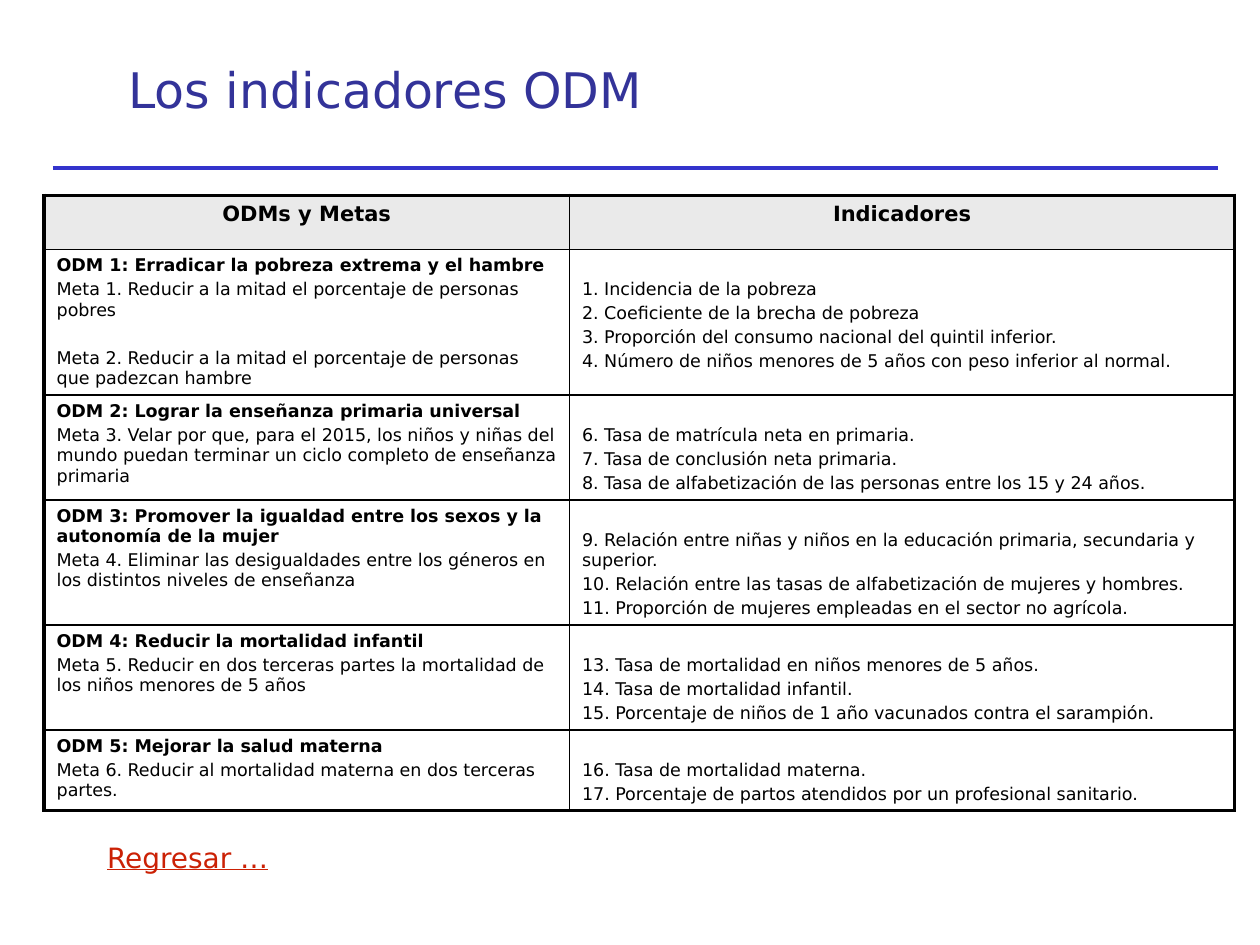
from lxml import etree
from pptx import Presentation
from pptx.dml.color import RGBColor
from pptx.enum.shapes import MSO_CONNECTOR
from pptx.enum.text import MSO_ANCHOR, MSO_AUTO_SIZE, PP_ALIGN
from pptx.oxml.ns import qn
from pptx.util import Inches, Pt

FONT = "DejaVu Sans"
BLACK = RGBColor(0x00, 0x00, 0x00)
WHITE = RGBColor(0xFF, 0xFF, 0xFF)
GRAY = RGBColor(0xEA, 0xEA, 0xEA)
NAVY = RGBColor(0x33, 0x33, 0x99)
BLUE = RGBColor(0x33, 0x33, 0xCC)
RED = RGBColor(0xCB, 0x21, 0x05)
LEFT, CENTER = PP_ALIGN.LEFT, PP_ALIGN.CENTER
TOP, MIDDLE = MSO_ANCHOR.TOP, MSO_ANCHOR.MIDDLE
NO_FIT = MSO_AUTO_SIZE.NONE
STRAIGHT = MSO_CONNECTOR.STRAIGHT

HEADERS = ["ODMs y Metas", "Indicadores"]
GOALS = [
    ("ODM 1: Erradicar la pobreza extrema y el hambre",
     ["Meta 1. Reducir a la mitad el porcentaje de personas pobres",
      "Meta 2. Reducir a la mitad el porcentaje de personas que padezcan hambre"],
     ["1. Incidencia de la pobreza",
      "2. Coeficiente de la brecha de pobreza",
      "3. Proporción del consumo nacional del quintil inferior.",
      "4. Número de niños menores de 5 años con peso inferior al normal."]),
    ("ODM 2: Lograr la enseñanza primaria universal",
     ["Meta 3. Velar por que, para el 2015, los niños y niñas del mundo puedan "
      "terminar un ciclo completo de enseñanza primaria"],
     ["6. Tasa de matrícula neta en primaria.",
      "7. Tasa de conclusión neta primaria.",
      "8. Tasa de alfabetización de las personas entre los 15 y 24 años."]),
    ("ODM 3: Promover la igualdad entre los sexos y la autonomía de la mujer",
     ["Meta 4. Eliminar las desigualdades entre los géneros en los distintos "
      "niveles de enseñanza"],
     ["9. Relación entre niñas y niños en la educación primaria, secundaria y superior.",
      "10. Relación entre las tasas de alfabetización de mujeres y hombres.",
      "11. Proporción de mujeres empleadas en el sector no agrícola."]),
    ("ODM 4: Reducir la mortalidad infantil",
     ["Meta 5. Reducir en dos terceras partes la mortalidad de los niños "
      "menores de 5 años"],
     ["13. Tasa de mortalidad en niños menores de 5 años.",
      "14. Tasa de mortalidad infantil.",
      "15. Porcentaje de niños de 1 año vacunados contra el sarampión."]),
    ("ODM 5: Mejorar la salud materna",
     ["Meta 6. Reducir al mortalidad materna en dos terceras partes."],
     ["16. Tasa de mortalidad materna.",
      "17. Porcentaje de partos atendidos por un profesional sanitario."]),
]
COL_WIDTHS = [4.17, 5.28]
ROW_HEIGHTS = [0.43, 1.15, 0.83, 0.99, 0.83, 0.64]
THIN, THICK = Pt(1), Pt(2.25)


def write(p, text, size=10, color=BLACK, bold=False, underline=False, align=LEFT, before=0):
    p.alignment = align
    p.space_before = Pt(before)
    r = p.add_run()
    r.text = text
    r.font.name = FONT
    r.font.size = Pt(size)
    r.font.bold = bold
    r.font.underline = underline
    r.font.color.rgb = color


def set_borders(cell, widths):
    tcPr = cell._tc.get_or_add_tcPr()
    for i, (side, width) in enumerate(zip("LRTB", widths)):
        ln = etree.Element(qn(f"a:ln{side}"), w=str(width))
        fill = etree.SubElement(ln, qn("a:solidFill"))
        etree.SubElement(fill, qn("a:srgbClr"), val=str(BLACK))
        tcPr.insert(i, ln)


class SlideBuilder:
    def __init__(self, slide):
        self.s = slide

    def placeholder(self, idx, box, text, anchor=TOP, **fmt):
        sp = self.s.placeholders[idx]
        sp.left, sp.top, sp.width, sp.height = map(Inches, box)
        tf = sp.text_frame
        tf.auto_size = NO_FIT
        tf.vertical_anchor = anchor
        p = tf.paragraphs[0]
        pPr = p._p.get_or_add_pPr()
        pPr.set("marL", "0")
        pPr.set("indent", "0")
        write(p, text, **fmt)
        etree.SubElement(pPr, qn("a:buNone"))

    def rule(self, x1, x2, y, color, width):
        cn = self.s.shapes.add_connector(STRAIGHT, Inches(x1), Inches(y), Inches(x2), Inches(y))
        cn.line.color.rgb = color
        cn.line.width = Pt(width)
        etree.SubElement(cn._element.spPr, qn("a:effectLst"))

    def table(self, x, y, col_widths, row_heights):
        rows, cols = len(row_heights), len(col_widths)
        frame = self.s.shapes.add_table(rows, cols, Inches(x), Inches(y),
                                        Inches(sum(col_widths)), Inches(sum(row_heights)))
        tbl = frame.table
        tbl.first_row = tbl.horz_banding = False
        for col, width in zip(tbl.columns, col_widths):
            col.width = Inches(width)
        for row, height in zip(tbl.rows, row_heights):
            row.height = Inches(height)
        for i in range(rows):
            for j in range(cols):
                cell = tbl.cell(i, j)
                edges = (j == 0, j == cols - 1, i == 0, i == rows - 1)
                set_borders(cell, [THICK if edge else THIN for edge in edges])
                cell.fill.solid()
                cell.fill.fore_color.rgb = GRAY if i == 0 else WHITE
        return tbl

    def cell(self, cell, paragraphs, top=0.05):
        cell.margin_top = Inches(top)
        tf = cell.text_frame
        for i, (text, fmt) in enumerate(paragraphs):
            p = tf.add_paragraph() if i else tf.paragraphs[0]
            write(p, text, **fmt)


def main():
    prs = Presentation()
    prs.slide_width, prs.slide_height = Inches(10), Inches(7.5)
    b = SlideBuilder(prs.slides.add_slide(prs.slide_layouts[1]))
    b.placeholder(0, (0.92, 0.08, 8.5, 1.25), "Los indicadores ODM",
                  anchor=MIDDLE, size=28, color=NAVY)
    b.rule(0.42, 9.67, 1.33, BLUE, 2.25)
    b.placeholder(1, (0.75, 6.62, 8.5, 0.54), "Regresar …", size=16, color=RED, underline=True)

    tbl = b.table(0.35, 1.55, COL_WIDTHS, ROW_HEIGHTS)
    for j, text in enumerate(HEADERS):
        b.cell(tbl.cell(0, j), [(text, dict(size=12, bold=True, align=CENTER))])
    for i, (goal, targets, indicators) in enumerate(GOALS, 1):
        metas = [(t, dict(before=15.7 if k else 2)) for k, t in enumerate(targets)]
        b.cell(tbl.cell(i, 0), [(goal, dict(bold=True))] + metas)
        lines = [(t, dict(before=2 if k else 0)) for k, t in enumerate(indicators)]
        b.cell(tbl.cell(i, 1), lines, top=0.24)
    prs.save("out.pptx")


if __name__ == "__main__":
    main()
